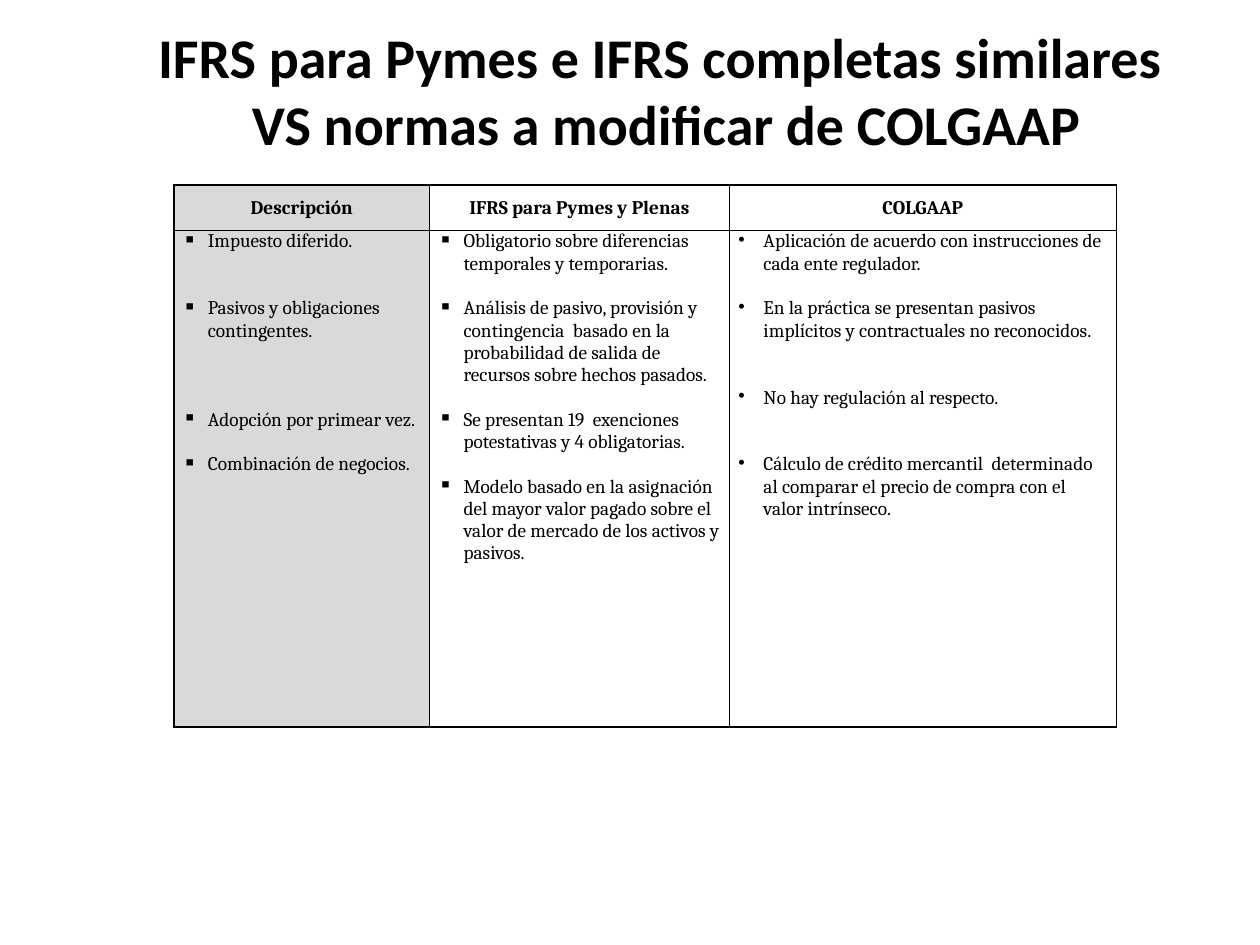
"""Builds a slide comparing IFRS with COLGAAP in a three-column table."""
from lxml import etree
from pptx import Presentation
from pptx.dml.color import RGBColor
from pptx.enum.text import MSO_ANCHOR, PP_ALIGN
from pptx.oxml.ns import qn
from pptx.util import Inches, Pt

CENTER, LEFT = PP_ALIGN.CENTER, PP_ALIGN.LEFT
MIDDLE, TOP = MSO_ANCHOR.MIDDLE, MSO_ANCHOR.TOP

THEME = {
    "ink": "000000", "paper": "FFFFFF", "shade": "D9D9D9",
    "title_font": "Calibri", "title_size": 32,
    "table_font": "Cambria", "table_size": 11, "line": 12.75, "border": 1,
}

TITLE = "IFRS para Pymes e IFRS completas similares \vVS normas a modificar de COLGAAP"
TITLE_BOX = (0.58, 0.21, 9.42, 1)
TABLE_ORIGIN = (1.38, 1.47)
ROW_HEIGHTS = (0.36, 3.94)
CELL_MARGIN = 0.07
INDENT = 0.2

# Each item is (lines of space above, text).
COLUMNS = [
    {"head": "Descripción", "width": 2.03, "fill": "shade", "bullet": "▪", "items": [
        (0, "Impuesto diferido."),
        (2, "Pasivos y obligaciones contingentes."),
        (3, "Adopción por primear vez."),
        (1, "Combinación de negocios."),
    ]},
    {"head": "IFRS para Pymes y Plenas", "width": 2.38, "fill": "paper", "bullet": "▪", "items": [
        (0, "Obligatorio sobre diferencias temporales y temporarias."),
        (1, "Análisis de pasivo, provisión y contingencia  basado en la "
            "probabilidad de salida de recursos sobre hechos pasados."),
        (1, "Se presentan 19  exenciones potestativas y 4 obligatorias."),
        (1, "Modelo basado en la asignación del mayor valor pagado sobre el "
            "valor de mercado de los activos y pasivos."),
    ]},
    {"head": "COLGAAP", "width": 3.07, "fill": "paper", "bullet": "•", "items": [
        (0, "Aplicación de acuerdo con instrucciones de cada ente regulador."),
        (1, "En la práctica se presentan pasivos implícitos y contractuales no reconocidos."),
        (2, "No hay regulación al respecto."),
        (2, "Cálculo de crédito mercantil  determinado al comparar el precio "
            "de compra con el valor intrínseco."),
    ]},
]


def color(name):
    return RGBColor.from_string(THEME[name])


def format_runs(para, kind, bold):
    for span in para.runs:
        span.font.name = THEME[kind + "_font"]
        span.font.size = Pt(THEME[kind + "_size"])
        span.font.bold = bold
        span.font.color.rgb = color("ink")


def add_bullet(para, mark):
    properties = para._p.get_or_add_pPr()
    properties.set("marL", str(Inches(INDENT)))
    properties.set("indent", str(-Inches(INDENT)))
    etree.SubElement(properties, qn("a:buChar")).set("char", mark)


def style_cell(cell, fill, anchor):
    properties = cell._tc.get_or_add_tcPr()
    for side in ("lnL", "lnR", "lnT", "lnB"):
        line = etree.SubElement(properties, qn("a:" + side), w=str(Pt(THEME["border"])))
        solid = etree.SubElement(line, qn("a:solidFill"))
        etree.SubElement(solid, qn("a:srgbClr"), val=THEME["ink"])
    cell.fill.solid()
    cell.fill.fore_color.rgb = color(fill)
    cell.margin_left = cell.margin_right = Inches(CELL_MARGIN)
    cell.margin_top = cell.margin_bottom = 0
    cell.vertical_anchor = anchor


def add_title(page):
    title = page.shapes.title
    title.left, title.top, title.width, title.height = map(Inches, TITLE_BOX)
    title.fill.solid()
    title.fill.fore_color.rgb = color("paper")
    frame = title.text_frame
    frame.word_wrap = True
    frame.vertical_anchor = MIDDLE
    para = frame.paragraphs[0]
    para.text = TITLE
    para.alignment = CENTER
    format_runs(para, "title", True)


def fill_body(cell, column):
    frame = cell.text_frame
    for index, (gap, text) in enumerate(column["items"]):
        para = frame.add_paragraph() if index else frame.paragraphs[0]
        para.text = text
        add_bullet(para, column["bullet"])
        para.alignment = LEFT
        if gap:
            para.space_before = Pt(gap * THEME["line"])
        format_runs(para, "table", False)


def add_comparison(page):
    size = (sum(column["width"] for column in COLUMNS), sum(ROW_HEIGHTS))
    table = page.shapes.add_table(
        len(ROW_HEIGHTS), len(COLUMNS), *map(Inches, TABLE_ORIGIN + size)).table
    table.first_row = table.horz_banding = False
    for row, height in zip(table.rows, ROW_HEIGHTS):
        row.height = Inches(height)
    for index, column in enumerate(COLUMNS):
        table.columns[index].width = Inches(column["width"])
        head, body = table.cell(0, index), table.cell(1, index)
        style_cell(head, column["fill"], MIDDLE)
        style_cell(body, column["fill"], TOP)
        para = head.text_frame.paragraphs[0]
        para.text = column["head"]
        para.alignment = CENTER
        format_runs(para, "table", True)
        fill_body(body, column)


def main():
    deck = Presentation()
    deck.slide_width, deck.slide_height = Inches(10), Inches(7.5)
    page = deck.slides.add_slide(deck.slide_layouts.get_by_name("Title Only"))
    add_title(page)
    add_comparison(page)
    deck.save("out.pptx")


if __name__ == "__main__":
    main()
